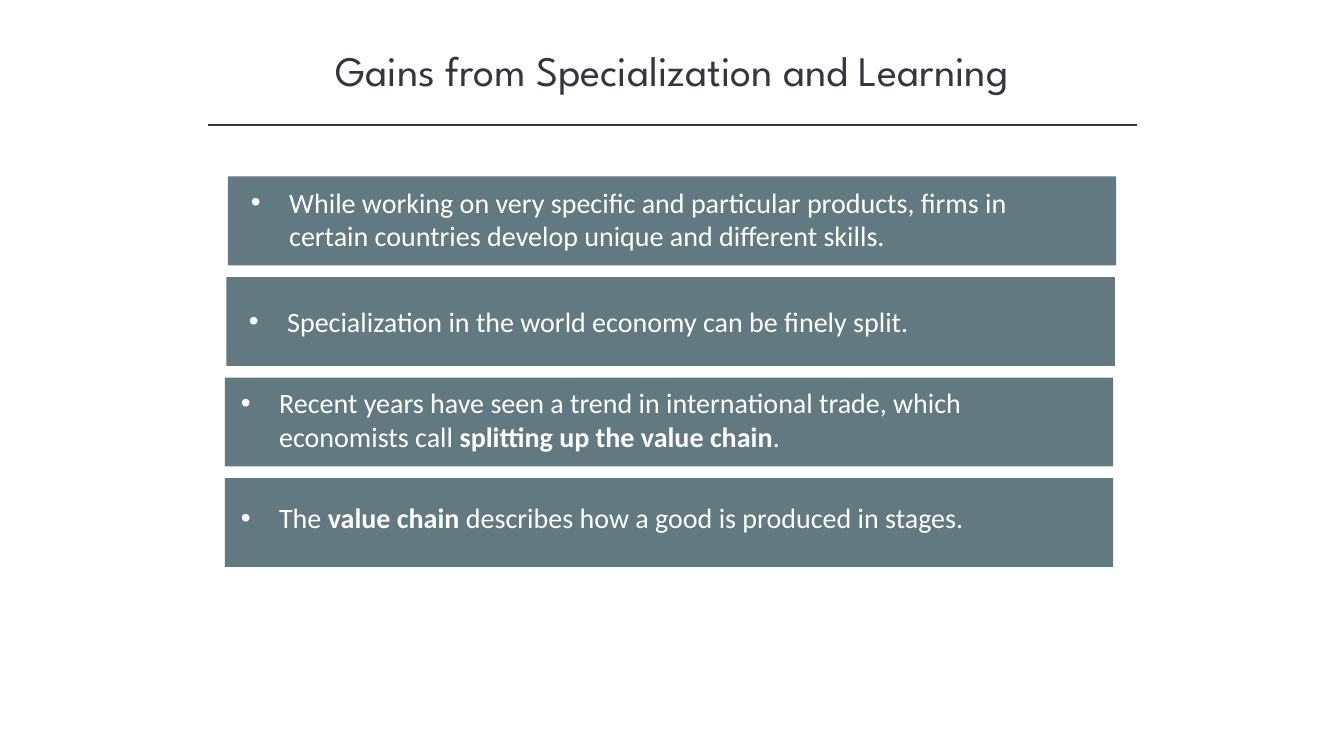
from pptx import Presentation
from pptx import util as u
from pptx.dml.color import RGBColor
from pptx.enum import shapes, text
from pptx.oxml.ns import qn
from lxml import etree

COLORS = {"ink": "323542", "bar": "627981", "white": "FFFFFF"}


class Deck:
    """Style and current slide; lengths are percentages of the slide size."""

    title_font, body_font = "League Spartan", "Calibri"
    title_size, body_size = u.Pt(30), u.Pt(20)
    indent = u.Inches(0.38)

    def __init__(self):
        self.prs = Presentation()
        self.prs.slide_width, self.prs.slide_height = u.Inches(13.33), u.Inches(7.5)
        self.s = self.prs.slides.add_slide(self.prs.slide_layouts[6])

    def x(self, share):
        return round(self.prs.slide_width * share / 100)

    def y(self, share):
        return round(self.prs.slide_height * share / 100)

    def box(self, left, top, width, height):
        return self.x(left), self.y(top), self.x(width), self.y(height)

    def color(self, name):
        return RGBColor.from_string(COLORS[name])

    def style(self, r, font, size, color, bold=False):
        r.font.name, r.font.size, r.font.bold = font, size, bold
        r.font.color.rgb = self.color(color)

    def title(self, words, *place):
        tf = self.s.shapes.add_textbox(*self.box(*place)).text_frame
        tf.word_wrap = True
        tf.auto_size = text.MSO_AUTO_SIZE.SHAPE_TO_FIT_TEXT
        p = tf.paragraphs[0]
        p.text = words
        p.alignment = text.PP_ALIGN.CENTER
        self.style(p.runs[0], self.title_font, self.title_size, "ink")

    def rule(self, left, right, top):
        line = self.s.shapes.add_connector(
            shapes.MSO_CONNECTOR.STRAIGHT,
            self.x(left), self.y(top), self.x(right), self.y(top))
        line.line.color.rgb = self.color("ink")
        line.line.width = u.Pt(1)
        etree.SubElement(line._element.spPr, qn("a:effectLst"))

    def group(self):
        return self.s.shapes.add_group_shape()

    def bar(self, group, *place):
        sp = group.shapes.add_shape(shapes.MSO_SHAPE.RECTANGLE, *self.box(*place))
        sp.shadow.inherit = False
        sp.fill.solid()
        sp.fill.fore_color.rgb = self.color("bar")
        sp.line.fill.background()
        return sp

    def bullet(self, group, parts, *place):
        """Write one bulleted paragraph; every second part is bold."""
        tf = self.bar(group, *place).text_frame
        tf.word_wrap = True
        tf.auto_size = text.MSO_AUTO_SIZE.SHAPE_TO_FIT_TEXT
        tf.vertical_anchor = text.MSO_ANCHOR.TOP
        p = tf.paragraphs[0]
        p.alignment = text.PP_ALIGN.LEFT
        pPr = p._p.get_or_add_pPr()
        pPr.set("marL", str(self.indent))
        pPr.set("indent", str(-self.indent))
        etree.SubElement(pPr, qn("a:buFont"), typeface="Arial")
        etree.SubElement(pPr, qn("a:buChar"), char="•")
        for i, words in enumerate(parts):
            r = p.add_run()
            r.text = words
            self.style(r, self.body_font, self.body_size, "white", bold=i % 2 == 1)


# Bar left, text left, text top, text height, text parts
POINTS = [
    (16.95, 17.93, 23.87, 10.27,
     ["While working on very specific and particular products, firms in "
      "certain countries develop unique and different skills."]),
    (16.85, 17.78, 39.6, 5.87,
     ["Specialization in the world economy can be finely split."]),
    (16.73, 17.18, 50.4, 10.27,
     ["Recent years have seen a trend in international trade, which economists call ",
      "splitting up the value chain", "."]),
    (16.73, 17.18, 65.6, 5.87,
     ["The ", "value chain ", "describes how a good is produced in stages."]),
]
BAR_TOP, BAR_STEP, BAR_WIDTH, BAR_HEIGHT = 23.35, 13.3, 66.1, 11.75
TEXT_WIDTH = 64.05


def main():
    deck = Deck()

    # Heading
    deck.title("Gains from Specialization and Learning", 12.53, 5.2, 75, 8.13)
    deck.rule(15.45, 84.62, 16.55)

    # Stacked bars with bullet points
    for row, (bar_left, text_left, text_top, text_height, parts) in enumerate(POINTS):
        group = deck.group()
        deck.bar(group, bar_left, BAR_TOP + row * BAR_STEP, BAR_WIDTH, BAR_HEIGHT)
        deck.bullet(group, parts, text_left, text_top, TEXT_WIDTH, text_height)

    deck.prs.save("out.pptx")


if __name__ == "__main__":
    main()
